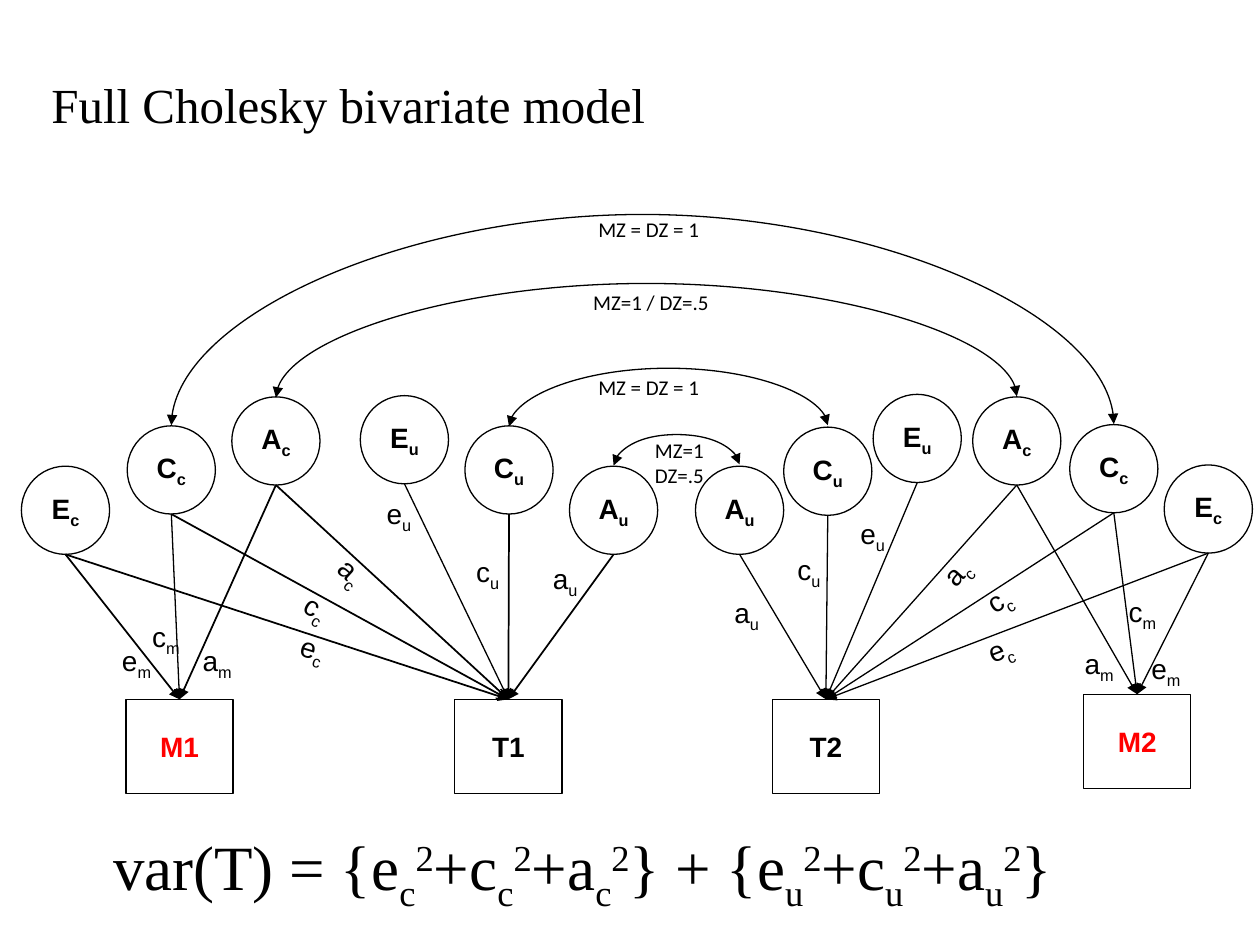
from collections import namedtuple

from lxml import etree
from pptx import Presentation
from pptx import util as u
from pptx.dml.color import RGBColor
from pptx.enum import shapes, text
from pptx.oxml import ns

Path = namedtuple("Path", "x y angle weight head", defaults=(0, 0.75, "triangle"))
DIAMETER, BOX_W, BOX_H = 0.7, 0.85, 0.75
LABEL_W, LABEL_H = 0.46, 0.37
BASELINES = {"_": "-25000", "^": "30000"}


def color(value):
    """Return the colour for a hex string."""
    return RGBColor.from_string(value)


def write(p, parts, size, font, hex_color="000000", bold=False):
    """Fill a paragraph; parts starting with _ or ^ are lowered or raised."""
    p.font.size, p.font.name, p.font.bold = u.Pt(size), font, bold
    p.font.color.rgb = color(hex_color)
    for part in parts:
        r = p.add_run()
        r.text = part.lstrip("_^")
        if part[0] in BASELINES:
            r._r.get_or_add_rPr().set("baseline", BASELINES[part[0]])


def add_text(s, x, y, w, h, lines, size, font, angle=0, wrap=False):
    """Add a text box with one paragraph per list of parts."""
    box = s.shapes.add_textbox(*map(u.Inches, (x, y, w, h)))
    box.rotation = angle
    tf = box.text_frame
    tf.word_wrap = wrap
    tf.auto_size = text.MSO_AUTO_SIZE.SHAPE_TO_FIT_TEXT
    for i, parts in enumerate(lines):
        p = tf.add_paragraph() if i else tf.paragraphs[0]
        write(p, parts, size, font)


def add_node(s, kind, x, y, w, h, parts, hex_color="000000"):
    """Add an outlined variable with a bold centred name."""
    sp = s.shapes.add_shape(kind, *map(u.Inches, (x, y, w, h)))
    sp.shadow.inherit = False
    sp.fill.solid()
    sp.fill.fore_color.rgb = color("FFFFFF")
    sp.line.color.rgb = color("000000")
    sp.line.width = u.Pt(0.75)
    tf = sp.text_frame
    tf.word_wrap = False
    tf.vertical_anchor = text.MSO_ANCHOR.MIDDLE
    p = tf.paragraphs[0]
    p.alignment = text.PP_ALIGN.CENTER
    write(p, parts, 16, "Arial", hex_color, True)


def add_arrow(s, kind, ends, weight=0.75, tail="triangle", head=None):
    """Add a black connector with the given arrowheads."""
    c = s.shapes.add_connector(kind, *map(u.Inches, ends))
    c.line.color.rgb = color("000000")
    c.line.width = u.Pt(weight)
    ln = c.line._get_or_add_ln()
    for tag, style in (("a:headEnd", head), ("a:tailEnd", tail)):
        if style:
            etree.SubElement(ln, ns.qn(tag), type=style)
    etree.SubElement(c._element.spPr, ns.qn("a:effectLst"))
    return c


def add_arc(s, x1, x2, y, rise):
    """Join two factors with a double-headed arc that rises above them."""
    depth, mid, half = 0.01, (x1 + x2) / 2, (x2 - x1) / 2
    ends = (mid - depth / 2, y - half, mid + depth / 2, y + half)
    c = add_arrow(s, shapes.MSO_CONNECTOR.CURVE, ends, head="triangle")
    sp_pr = c._element.spPr
    sp_pr.find(ns.qn("a:xfrm")).set("rot", "16200000")
    guides = sp_pr.find(ns.qn("a:prstGeom")).find(ns.qn("a:avLst"))
    value = round(rise / depth * 100000)
    etree.SubElement(guides, ns.qn("a:gd"), name="adj1", fmla=f"val {value}")


def add_twin(s, left, top, factors, traits, paths):
    """Draw one twin's factors, traits and labelled paths from a corner."""
    for name, (x, y) in factors.items():
        add_node(s, shapes.MSO_SHAPE.OVAL, left + x, top + y, DIAMETER, DIAMETER,
                 (name[0], "_" + name[1]))
    for name, (x, y) in traits.items():
        add_node(s, shapes.MSO_SHAPE.RECTANGLE, left + x, top + y, BOX_W, BOX_H,
                 (name,), "FF0000" if name[0] == "M" else "000000")
    targets = {name[0]: place for name, place in traits.items()}
    for name, path in paths.items():
        to_m = name[1] == "m"
        fx, fy = factors[name[0].upper() + ("c" if to_m else name[1])]
        tx, ty = targets["M" if to_m else "T"]
        ends = (left + fx + DIAMETER / 2, top + fy + DIAMETER,
                left + tx + BOX_W / 2, top + ty)
        add_arrow(s, shapes.MSO_CONNECTOR.STRAIGHT, ends, path.weight, path.head)
        add_text(s, left + path.x, top + path.y, LABEL_W, LABEL_H,
                 [(name[0], "_" + name[1])], 16, "Arial", path.angle)


def add_correlations(s):
    """Draw the arcs between the twins with their values."""
    for arc in ((4.87, 5.87, 3.69, 0.25), (4.04, 6.57, 3.38, 0.47),
                (1.36, 8.84, 3.37, 1.7), (2.19, 8.07, 3.15, 0.92)):
        add_arc(s, *arc)
    for x, y, w, h, lines in (
            (4.61, 2.25, 1.13, 0.3, ["MZ=1 / DZ=.5"]),
            (5.1, 3.42, 0.63, 0.5, ["MZ=1", "DZ=.5"]),
            (4.65, 1.67, 1.01, 0.3, ["MZ = DZ = 1"]),
            (4.65, 2.92, 1.01, 0.3, ["MZ = DZ = 1"])):
        add_text(s, x, y, w, h, [(line,) for line in lines], 12, "Calibri")


def main():
    """Build the slide and save it."""
    prs = Presentation()
    prs.slide_width, prs.slide_height = u.Inches(10), u.Inches(7.5)
    s = prs.slides.add_slide(prs.slide_layouts[6])
    add_twin(
        s, 0.17, 3.14,
        {"Ec": (0, 0.56), "Cc": (0.84, 0.24), "Ac": (1.67, 0.01),
         "Eu": (2.69, 0), "Cu": (3.52, 0.24), "Au": (4.35, 0.56)},
        {"M1": (0.83, 2.41), "T1": (3.44, 2.41)},
        {"em": Path(0.7, 1.92, weight=1), "cm": Path(0.94, 1.73),
         "am": Path(1.34, 1.92, weight=1), "ec": Path(2.12, 1.83, 17.1, 1),
         "cc": Path(2.15, 1.52, 30.6, 1, "arrow"), "ac": Path(2.42, 1.24, 42.4, 1),
         "eu": Path(2.8, 0.75), "cu": Path(3.51, 1.21, weight=1),
         "au": Path(4.12, 1.27, weight=1)})
    add_twin(
        s, 5.52, 3.13,
        {"Au": (0, 0.57), "Cu": (0.7, 0.26), "Eu": (1.41, 0),
         "Ac": (2.2, 0.02), "Cc": (2.97, 0.24), "Ec": (3.72, 0.56)},
        {"T2": (0.61, 2.42), "M2": (3.08, 2.38)},
        {"au": Path(0.21, 1.55), "cu": Path(0.71, 1.21), "eu": Path(1.21, 0.92),
         "ac": Path(1.86, 1.2, 312.1), "cc": Path(2.21, 1.42, 328.4),
         "ec": Path(2.22, 1.82, 339.2), "am": Path(2.99, 1.95),
         "cm": Path(3.34, 1.54), "em": Path(3.52, 1.99)})
    add_correlations(s)
    add_text(s, 0.31, 0.54, 9.1, 0.57, [("Full Cholesky bivariate model",)],
             28, "Times New Roman", wrap=True)
    formula = ["var(T) = {e", "_c", "^2", "+c", "_c", "^2", "+a", "_c", "^2",
               "} + {e", "_u", "^2", "+c", "_u", "^2", "+a", "_u", "^2", "}"]
    add_text(s, 0.8, 6.52, 8.15, 0.71, [formula], 36, "Times New Roman")
    prs.save("out.pptx")


if __name__ == "__main__":
    main()
